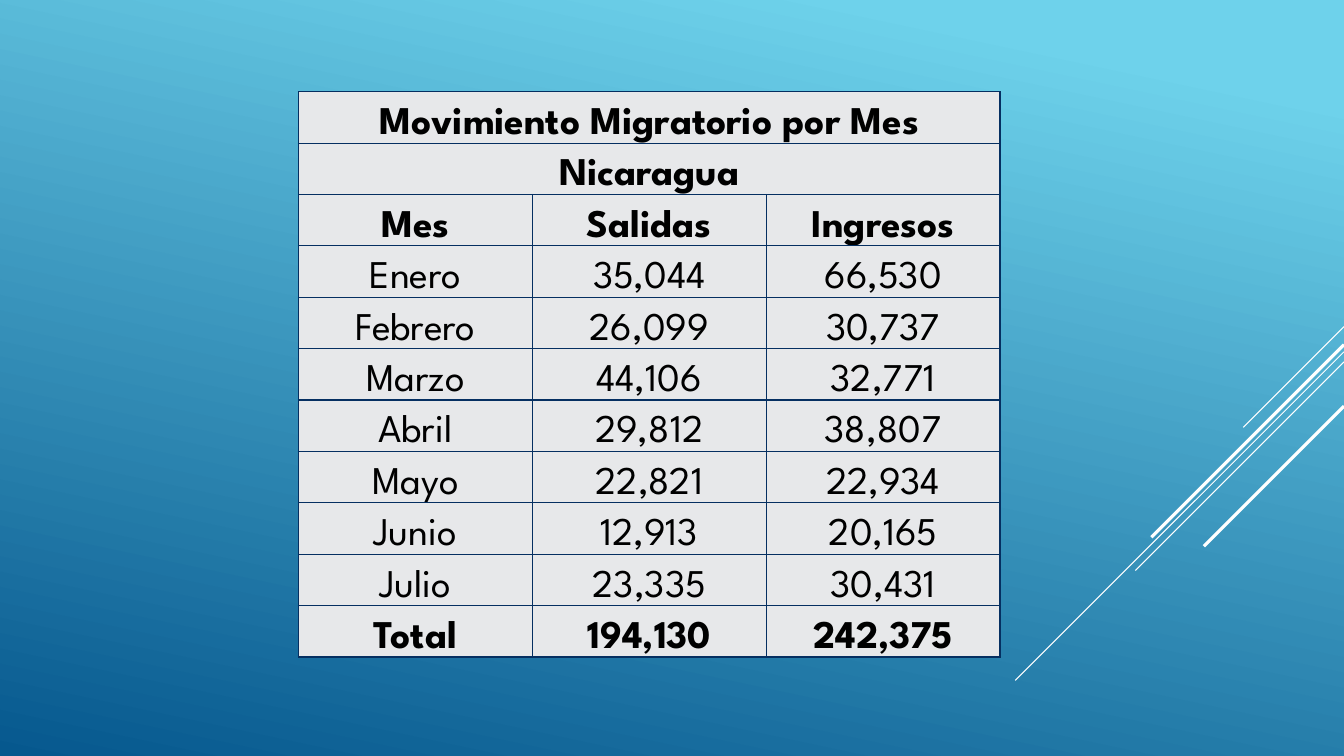
from lxml.etree import SubElement
from pptx import Presentation
from pptx.dml.color import RGBColor
from pptx.enum.shapes import MSO_CONNECTOR
from pptx.enum.text import MSO_ANCHOR, PP_ALIGN
from pptx.oxml import parse_xml
from pptx.oxml.ns import nsdecls, qn
from pptx.util import Inches, Pt

C = {"sky": "6ED2EB", "deep": "06588E", "line": "FFFFFF",
     "border": "052F61", "cell": "E7E8EA", "text": "000000"}
FONT = "League Spartan"
W, H = 13.33, 7.5
COL_W, ROW_H = 2.32, 0.51

rows = [
    ("Movimiento Migratorio por Mes",),
    ("Nicaragua",),
    ("Mes", "Salidas", "Ingresos"),
    ("Enero", "35,044", "66,530"),
    ("Febrero", "26,099", "30,737"),
    ("Marzo", "44,106", "32,771"),
    ("Abril", "29,812", "38,807"),
    ("Mayo", "22,821", "22,934"),
    ("Junio", "12,913", "20,165"),
    ("Julio", "23,335", "30,431"),
    ("Total", "194,130", "242,375"),
]
bold_rows = (0, 1, 2, len(rows) - 1)

prs = Presentation()
prs.slide_width, prs.slide_height = Inches(W), Inches(H)
s = prs.slides.add_slide(prs.slide_layouts[6])

bg = s.background.fill
bg.gradient()
bg.gradient_angle = 258
for stop, pos, name in zip(bg.gradient_stops, (0.1, 1), ("sky", "deep")):
    stop.position = pos
    stop.color.rgb = RGBColor.from_string(C[name])

for top, run, weight in [(3.24, 1, 0.75), (3.49, 3.26, 0.75), (3.59, 2.07, 0.75),
                         (3.42, 1.91, 2.25), (4.03, 1.39, 2.25)]:
    ln = s.shapes.add_connector(MSO_CONNECTOR.STRAIGHT, Inches(W), Inches(top),
                                Inches(W - run), Inches(top + run))
    ln.line.color.rgb = RGBColor.from_string(C["line"])
    ln.line.width = Pt(weight)
    SubElement(ln._element.spPr, qn("a:effectLst"))

tbl = s.shapes.add_table(len(rows), 3, Inches(2.96), Inches(0.91),
                         Inches(3 * COL_W), Inches(len(rows) * ROW_H)).table
for col in tbl.columns:
    col.width = Inches(COL_W)
for row in tbl.rows:
    row.height = Inches(ROW_H)
for i in range(2):
    tbl.cell(i, 0).merge(tbl.cell(i, 2))

for cell in tbl.iter_cells():
    cell.fill.solid()
    cell.fill.fore_color.rgb = RGBColor.from_string(C["cell"])
    cell.vertical_anchor = MSO_ANCHOR.BOTTOM
    cell.margin_left = cell.margin_top = cell.margin_right = Inches(0.01)
    cell.margin_bottom = 0
    for i, side in enumerate(("lnL", "lnR", "lnT", "lnB")):
        cell._tc.tcPr.insert(i, parse_xml(
            f'<a:{side} {nsdecls("a")} w="{Pt(1)}"><a:solidFill>'
            f'<a:srgbClr val="{C["border"]}"/></a:solidFill></a:{side}>'))

for i, values in enumerate(rows):
    for j, value in enumerate(values):
        p = tbl.cell(i, j).text_frame.paragraphs[0]
        p.alignment = PP_ALIGN.CENTER
        r = p.add_run()
        r.text = value
        r.font.name = FONT
        r.font.size = Pt(28)
        r.font.bold = i in bold_rows
        r.font.color.rgb = RGBColor.from_string(C["text"])

prs.save("out.pptx")
